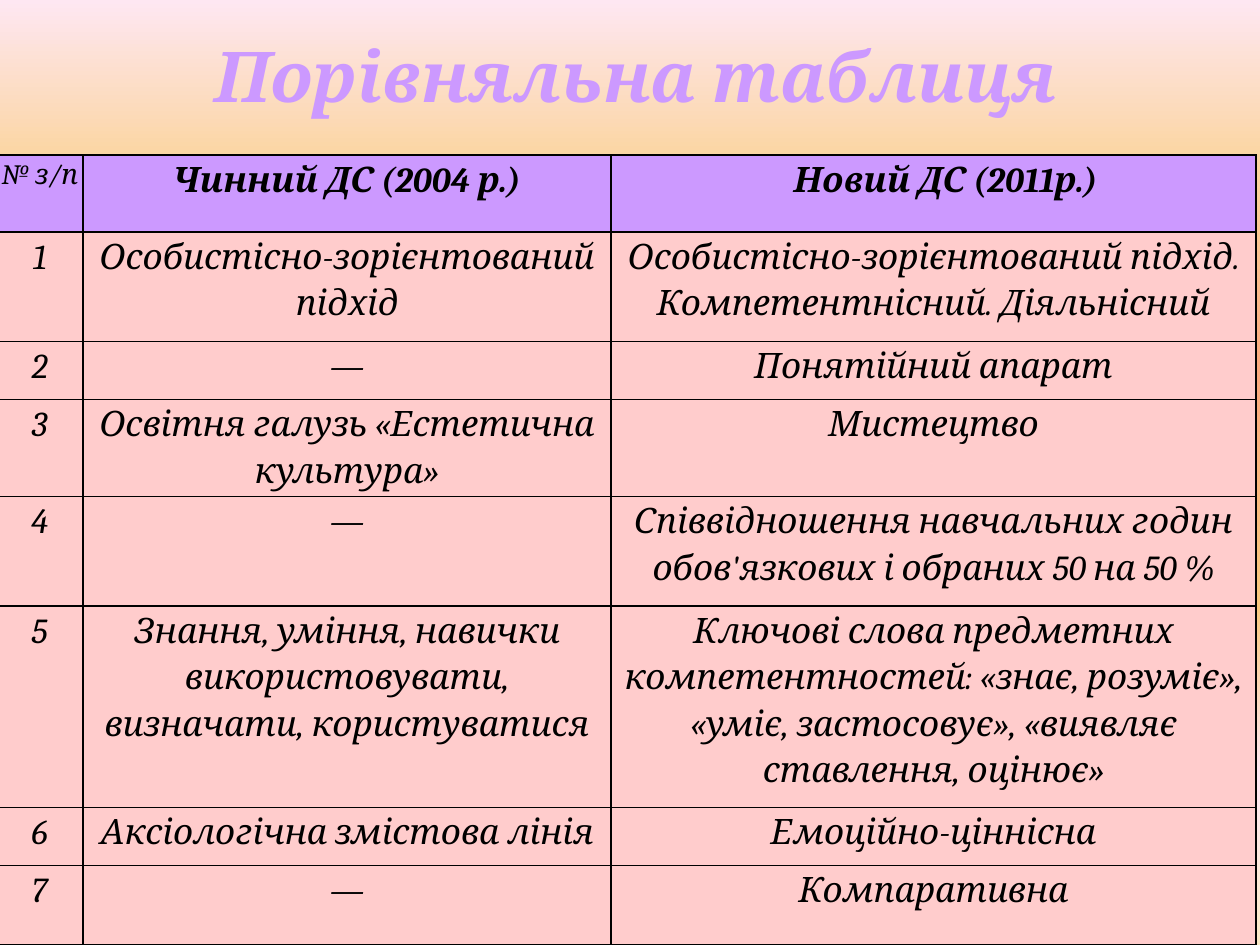
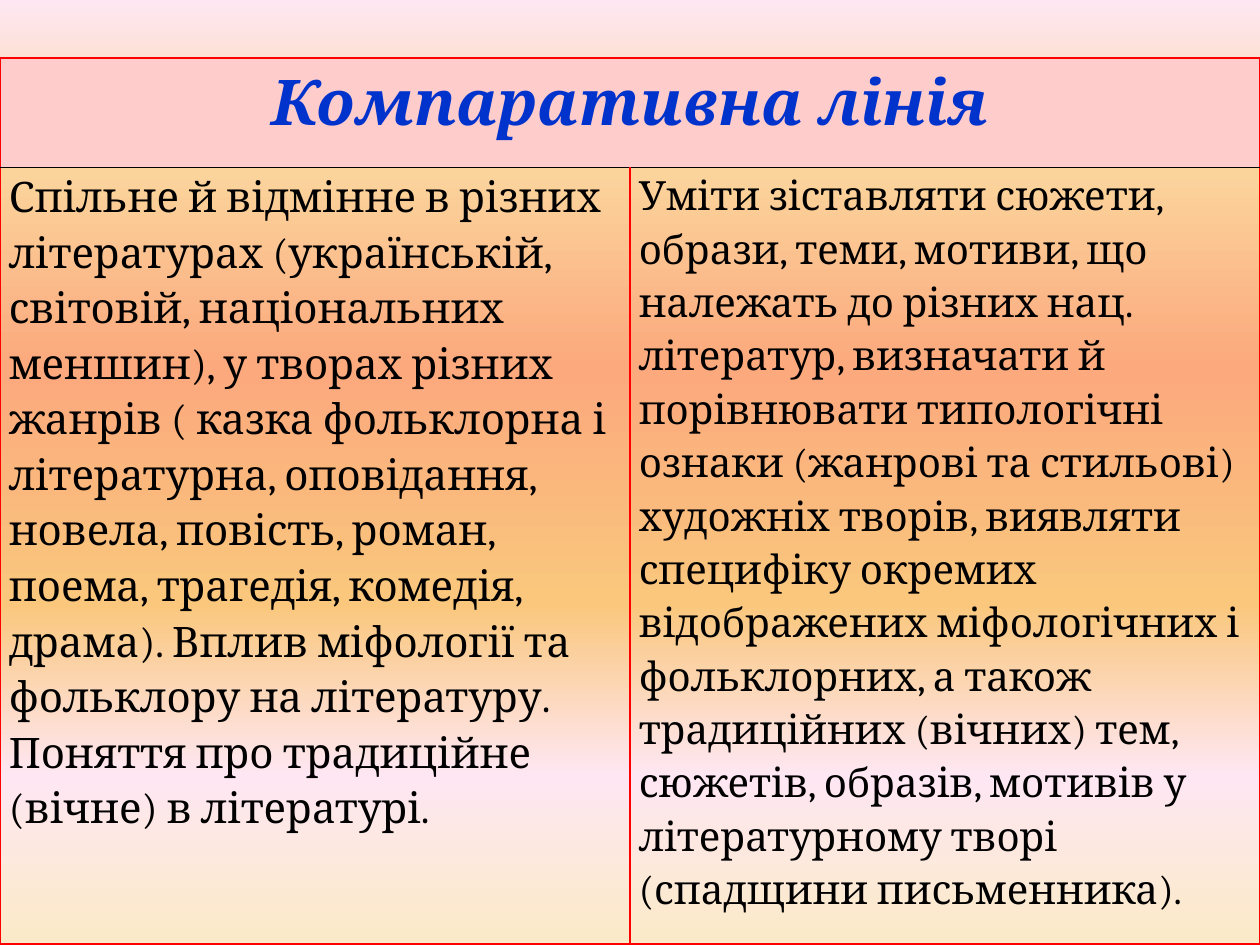
from lxml import etree
from pptx import Presentation
from pptx.dml.color import RGBColor
from pptx.enum.text import MSO_AUTO_SIZE, PP_ALIGN
from pptx.oxml.ns import qn
from pptx.util import Inches, Pt

CENTER = PP_ALIGN.CENTER
LEFT = PP_ALIGN.LEFT
FIT_SHAPE = MSO_AUTO_SIZE.SHAPE_TO_FIT_TEXT

BLACK = RGBColor(0x00, 0x00, 0x00)
RED = RGBColor(0xFF, 0x00, 0x00)
BLUE = RGBColor(0x00, 0x33, 0xCC)
LILAC = RGBColor(0xCC, 0x99, 0xFF)
PINK = RGBColor(0xFF, 0xCC, 0xCC)
CREAM = RGBColor(0xFB, 0xEA, 0xC7)
ROSE = RGBColor(0xFE, 0xE7, 0xF2)
AMBER = RGBColor(0xFA, 0xC7, 0x7D)
SALMON = RGBColor(0xFB, 0xA9, 0x7D)
SAND = RGBColor(0xFB, 0xD4, 0x9C)

SUNSET = [(0, CREAM), (18, ROSE), (36, AMBER), (61, SALMON), (82, SAND), (100, ROSE)]
UPWARD = 270
FONT = "Cambria"
LINE_SPACING = 1.15
WIDTH, HEIGHT = 10, 7.5

THIN_BLACK = (BLACK, 1)
THICK_RED = (RED, 1.5)
GRID_BORDERS = dict.fromkeys("LRTB", THIN_BLACK)
HEADING_BORDERS = {**dict.fromkeys("LRT", THICK_RED), "B": THIN_BLACK}
BODY_BORDERS = {**dict.fromkeys("LRB", THICK_RED), "T": THIN_BLACK}

COMPARISON = [
    ("№ з/п", "Чинний ДС (2004 р.)", "Новий ДС (2011р.)"),
    ("1", "Особистісно-зорієнтований підхід",
     "Особистісно-зорієнтований підхід. Компетентнісний. Діяльнісний"),
    ("2", "—", "Понятійний апарат"),
    ("3", "Освітня галузь «Естетична культура»", "Мистецтво"),
    ("4", "—", "Співвідношення навчальних годин обов'язкових і обраних 50 на 50 %"),
    ("5", "Знання, уміння, навички використовувати, визначати, користуватися",
     "Ключові слова предметних компетентностей: «знає, розуміє», "
     "«уміє, застосовує», «виявляє ставлення, оцінює»"),
    ("6", "Аксіологічна змістова лінія", "Емоційно-ціннісна"),
    ("7", "—", "Компаративна"),
]
CONTENT = (
    "Спільне й відмінне в різних літературах (українській, світовій, "
    "національних меншин), у творах різних жанрів ( казка фольклорна і "
    "літературна, оповідання, новела, повість, роман, поема, трагедія, "
    "комедія, драма). Вплив міфології та фольклору на літературу. "
    "Поняття про традиційне (вічне) в літературі."
)
SKILLS = (
    "Уміти зіставляти сюжети, образи, теми, мотиви, що належать до різних "
    "нац. літератур, визначати й порівнювати типологічні ознаки (жанрові та "
    "стильові) художніх творів, виявляти специфіку окремих відображених "
    "міфологічних і фольклорних, а також традиційних (вічних) тем, сюжетів, "
    "образів, мотивів у літературному творі (спадщини письменника)."
)


def add_page(deck):
    page = deck.slides.add_slide(deck.slide_layouts[6])
    page.background.fill.gradient()
    gradient = next(page.element.iter(qn("a:gradFill")))
    stops = gradient.find(qn("a:gsLst"))
    for stop in list(stops):
        stops.remove(stop)
    for share, color in SUNSET:
        stop = etree.SubElement(stops, qn("a:gs"), pos=str(share * 1000))
        etree.SubElement(stop, qn("a:srgbClr"), val=str(color))
    gradient.find(qn("a:lin")).set("ang", str(UPWARD * 60000))
    return page


def write(frame, text, size, color=BLACK, bold=False, italic=False, align=CENTER):
    frame.text = text
    para = frame.paragraphs[0]
    para.alignment = align
    font = para.runs[0].font
    font.name = FONT
    font.size = Pt(size)
    font.bold = bold
    font.italic = italic
    font.color.rgb = color
    return para


def add_title(page, text, left, top, width, height):
    box = page.shapes.add_textbox(Inches(left), Inches(top), Inches(width), Inches(height))
    frame = box.text_frame
    frame.word_wrap = True
    write(frame, text, 40, LILAC, bold=True, italic=True)
    frame.auto_size = FIT_SHAPE


def add_grid(page, left, top, columns, rows):
    frame = page.shapes.add_table(len(rows), len(columns), Inches(left), Inches(top),
                                  Inches(sum(columns)), Inches(sum(rows)))
    table = frame.table
    table.first_row = False
    table.horz_banding = False
    for column, width in zip(table.columns, columns):
        column.width = Inches(width)
    for row, height in zip(table.rows, rows):
        row.height = Inches(height)
    return table


def style_cell(cell, borders, margin, fill=None):
    cell.margin_left = cell.margin_right = Inches(margin)
    cell.margin_top = cell.margin_bottom = 0
    properties = cell._tc.get_or_add_tcPr()
    for side, (color, points) in borders.items():
        line = etree.SubElement(properties, qn(f"a:ln{side}"), w=str(Pt(points)))
        solid = etree.SubElement(line, qn("a:solidFill"))
        etree.SubElement(solid, qn("a:srgbClr"), val=str(color))
    if fill is None:
        cell.fill.background()
    else:
        cell.fill.solid()
        cell.fill.fore_color.rgb = fill


def write_cell(cell, text, size, **style):
    para = write(cell.text_frame, text, size, **style)
    para.line_spacing = LINE_SPACING
    return para


def build_comparison(deck):
    page = add_page(deck)
    table = add_grid(page, -0.03, 1.23, [0.69, 4.19, 5.12],
                     [0.61, 0.87, 0.46, 0.77, 0.87, 1.6, 0.46, 0.63])
    for row, texts in enumerate(COMPARISON):
        header = row == 0
        for column, text in enumerate(texts):
            cell = table.cell(row, column)
            style_cell(cell, GRID_BORDERS, 0.03, LILAC if header else PINK)
            para = write_cell(cell, text, 16 if header and column == 0 else 20,
                              bold=header and column > 0, italic=True)
            if header and column == 2:
                para._p.get_or_add_pPr().set("marL", str(Inches(0.19)))
    add_title(page, "Порівняльна таблиця", 1.41, 0.21, 7.27, 0.77)


def build_comparative_line(deck):
    page = add_page(deck)
    table = add_grid(page, 0, 0.46, [WIDTH / 2] * 2, [0.87, 6.08])
    heading = table.cell(0, 0)
    heading.merge(table.cell(0, 1))
    for column, (text, size) in enumerate([(CONTENT, 24), (SKILLS, 23)]):
        style_cell(table.cell(0, column), HEADING_BORDERS, 0.07, PINK)
        body = table.cell(1, column)
        style_cell(body, BODY_BORDERS, 0.07)
        write_cell(body, text, size, align=LEFT)
    write_cell(heading, "Компаративна лінія", 36, color=BLUE, bold=True, italic=True)


def main():
    deck = Presentation()
    deck.slide_width = Inches(WIDTH)
    deck.slide_height = Inches(HEIGHT)
    build_comparison(deck)
    build_comparative_line(deck)
    deck.save("out.pptx")


if __name__ == "__main__":
    main()
